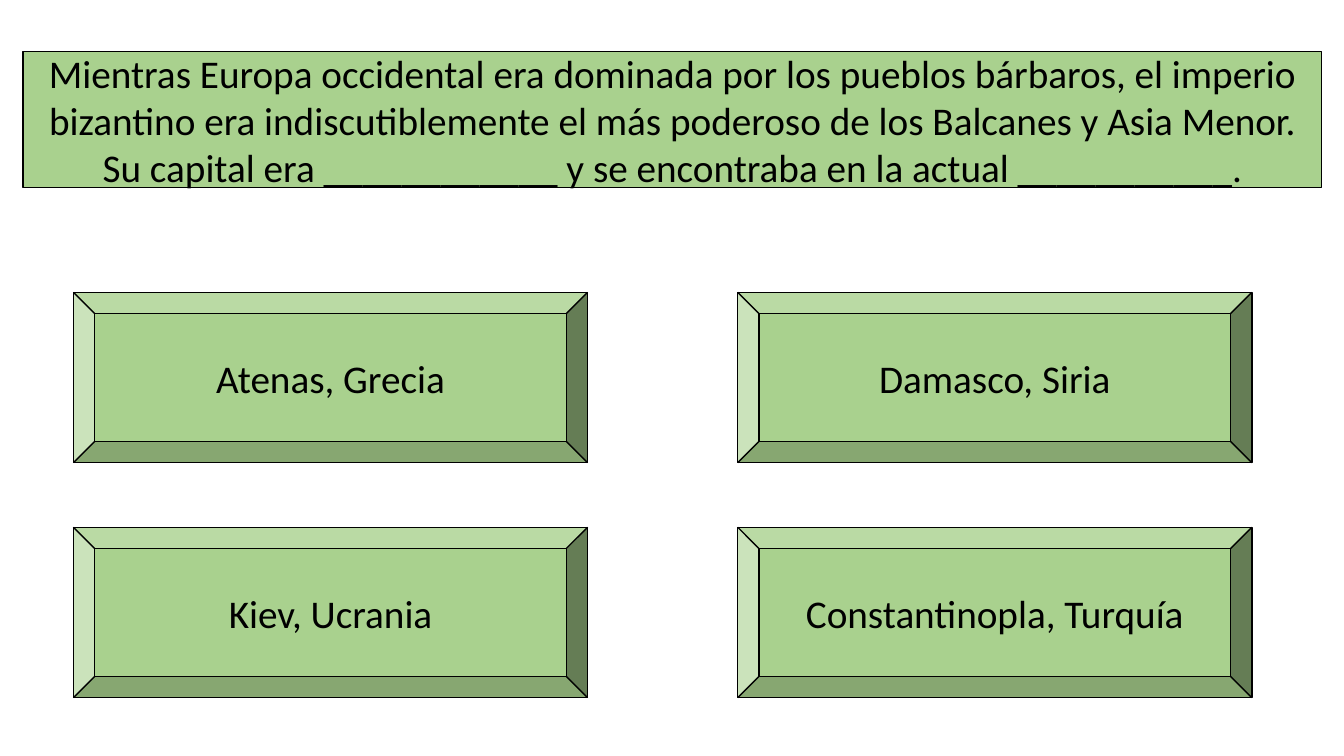
import pptx
import pptx.util
import pptx.dml.color
import pptx.enum.shapes
import pptx.enum.text

Pt = pptx.util.Pt


def color(hex_code):
    return pptx.dml.color.RGBColor.from_string(hex_code)


def style_panel(panel, wording):
    panel.fill.solid()
    panel.fill.fore_color.rgb = color("A9D18E")
    panel.line.color.rgb = color("000000")
    panel.line.width = Pt(1)
    frame = panel.text_frame
    frame.text = wording
    frame.word_wrap = True
    frame.auto_size = pptx.enum.text.MSO_AUTO_SIZE.NONE
    frame.vertical_anchor = pptx.enum.text.MSO_ANCHOR.MIDDLE
    paragraph = frame.paragraphs[0]
    paragraph.alignment = pptx.enum.text.PP_ALIGN.CENTER
    paragraph.font.name = "Calibri"
    paragraph.font.size = Pt(28)
    paragraph.font.color.rgb = color("000000")


quiz = pptx.Presentation()
quiz.slide_width = Pt(960)
quiz.slide_height = Pt(540)
slide = quiz.slides.add_slide(quiz.slide_layouts[5])

question = slide.shapes.title
question.left, question.top = Pt(16.5), Pt(36.7)
question.width, question.height = Pt(927.4), Pt(97.2)
style_panel(
    question,
    "Mientras Europa occidental era dominada por los pueblos bárbaros, "
    "el imperio bizantino era indiscutiblemente el más poderoso de los "
    "Balcanes y Asia Menor. Su capital era ____________ y se encontraba "
    "en la actual ___________.",
)

answers = [
    ["Atenas, Grecia", "Damasco, Siria"],
    ["Kiev, Ucrania", "Constantinopla, Turquía"],
]
for row, answer_row in enumerate(answers):
    for column, answer in enumerate(answer_row):
        option = slide.shapes.add_shape(
            pptx.enum.shapes.MSO_SHAPE.BEVEL,
            Pt(52.5 + column * 474.5),
            Pt(208.8 + row * 167.8),
            Pt(367.2),
            Pt(121.7),
        )
        option.shadow.inherit = False
        style_panel(option, answer)

quiz.save("out.pptx")
